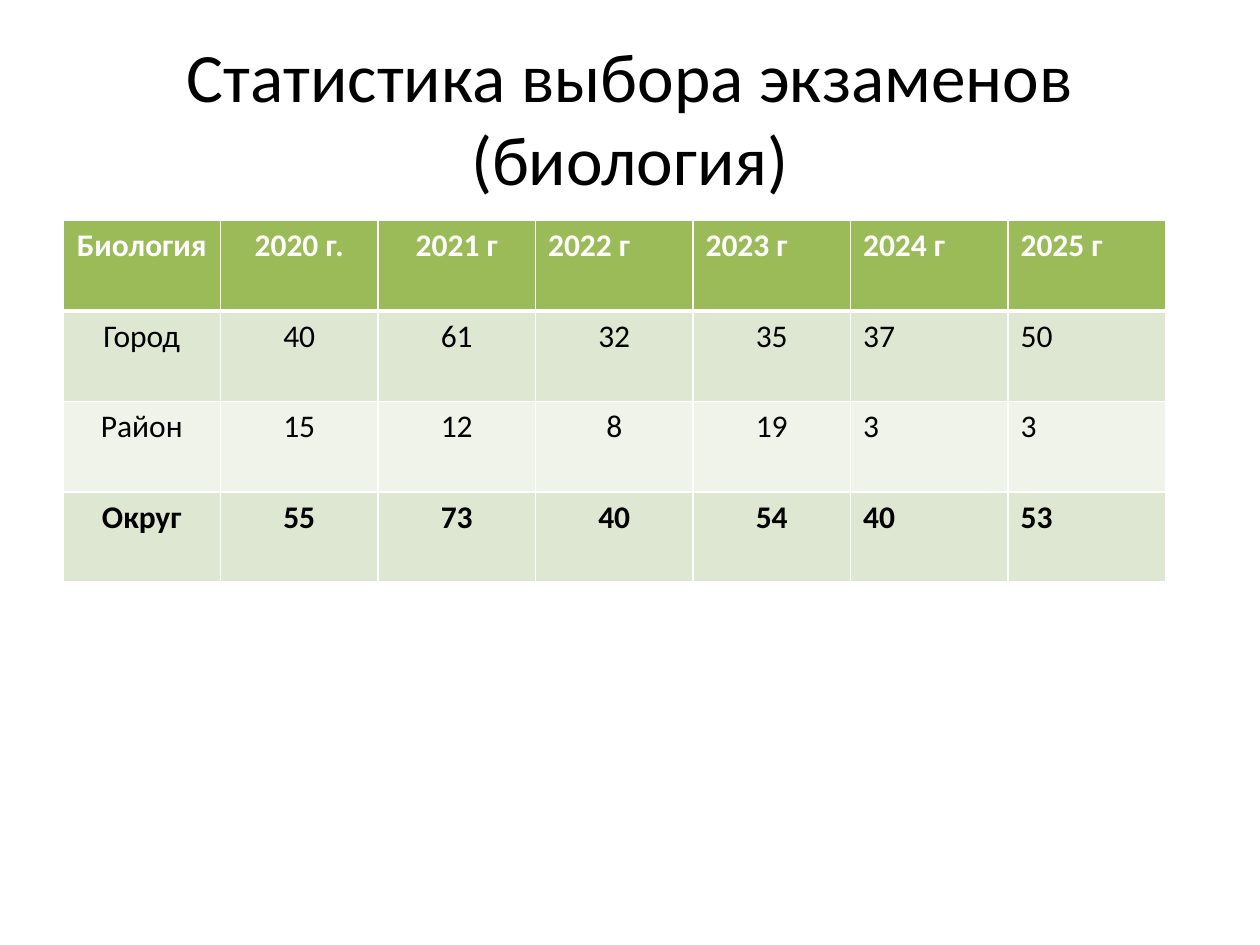
import pptx
import pptx.util
import pptx.dml.color
import pptx.enum.text
import pptx.oxml
import pptx.oxml.ns

Pt = pptx.util.Pt
ALIGN = pptx.enum.text.PP_ALIGN

TITLE = "Статистика выбора экзаменов\v(биология)"
ROWS = [
    ["Биология", "2020 г.", "2021 г", "2022 г", "2023 г", "2024 г", "2025 г"],
    ["Город", "40", "61", "32", "35", "37", "50"],
    ["Район", "15", "12", "8", "19", "3", "3"],
    ["Округ", "55", "73", "40", "54", "40", "53"],
]
COLORS = {"header": "9BBB59", "odd": "DEE7D1", "even": "EFF3EA",
          "white": "FFFFFF", "black": "000000"}
ROW_STYLES = [
    {"fill": "header", "text": "white", "bold": True, "centered": 3},
    {"fill": "odd", "text": "black", "bold": False, "centered": 5},
    {"fill": "even", "text": "black", "bold": False, "centered": 5},
    {"fill": "odd", "text": "black", "bold": True, "centered": 5},
]
LEFT, TABLE_TOP = 36, 126
COLUMN_WIDTH, ROW_HEIGHT = 90, 51.7
BORDER, HEADER_BORDER = 1, 3


def rgb(name):
    return pptx.dml.color.RGBColor.from_string(COLORS[name])


def format_paragraph(paragraph, align, color, **font_values):
    paragraph.alignment = align
    for run in paragraph.runs:
        run.font.color.rgb = rgb(color)
        for name, value in {"name": "Calibri", **font_values}.items():
            setattr(run.font, name, value)


def add_borders(cell, widths):
    properties = cell._tc.get_or_add_tcPr()
    for index, (side, width) in enumerate(widths.items()):
        properties.insert(index, pptx.oxml.parse_xml(
            f'<a:ln{side} {pptx.oxml.ns.nsdecls("a")} w="{Pt(width)}"><a:solidFill>'
            f'<a:srgbClr val="{COLORS["white"]}"/></a:solidFill></a:ln{side}>'))


def add_title(slide):
    shape = slide.shapes.add_textbox(Pt(LEFT), Pt(21.6), Pt(648), Pt(90))
    frame = shape.text_frame
    frame.word_wrap = True
    frame.vertical_anchor = pptx.enum.text.MSO_ANCHOR.MIDDLE
    frame.text = TITLE
    format_paragraph(frame.paragraphs[0], ALIGN.CENTER, "black", size=Pt(39.6))


def add_statistics(slide):
    row_count, column_count = len(ROWS), len(ROWS[0])
    table = slide.shapes.add_table(
        row_count, column_count, Pt(LEFT), Pt(TABLE_TOP),
        Pt(COLUMN_WIDTH * column_count), Pt(ROW_HEIGHT * row_count)).table
    for column in table.columns:
        column.width = Pt(COLUMN_WIDTH)
    for row_index, (values, style) in enumerate(zip(ROWS, ROW_STYLES)):
        table.rows[row_index].height = Pt(ROW_HEIGHT)
        top = HEADER_BORDER if row_index == 1 else BORDER
        bottom = HEADER_BORDER if row_index == 0 else BORDER
        for column_index, value in enumerate(values):
            cell = table.cell(row_index, column_index)
            cell.text = value
            cell.fill.solid()
            cell.fill.fore_color.rgb = rgb(style["fill"])
            centered = column_index < style["centered"]
            format_paragraph(cell.text_frame.paragraphs[0],
                             ALIGN.CENTER if centered else ALIGN.LEFT,
                             style["text"], size=Pt(18), bold=style["bold"])
            add_borders(cell, {"L": BORDER, "R": BORDER, "T": top, "B": bottom})


def main():
    presentation = pptx.Presentation()
    presentation.slide_width, presentation.slide_height = Pt(720), Pt(540)
    slide = presentation.slides.add_slide(presentation.slide_layouts[6])
    add_title(slide)
    add_statistics(slide)
    presentation.save("out.pptx")


if __name__ == "__main__":
    main()
